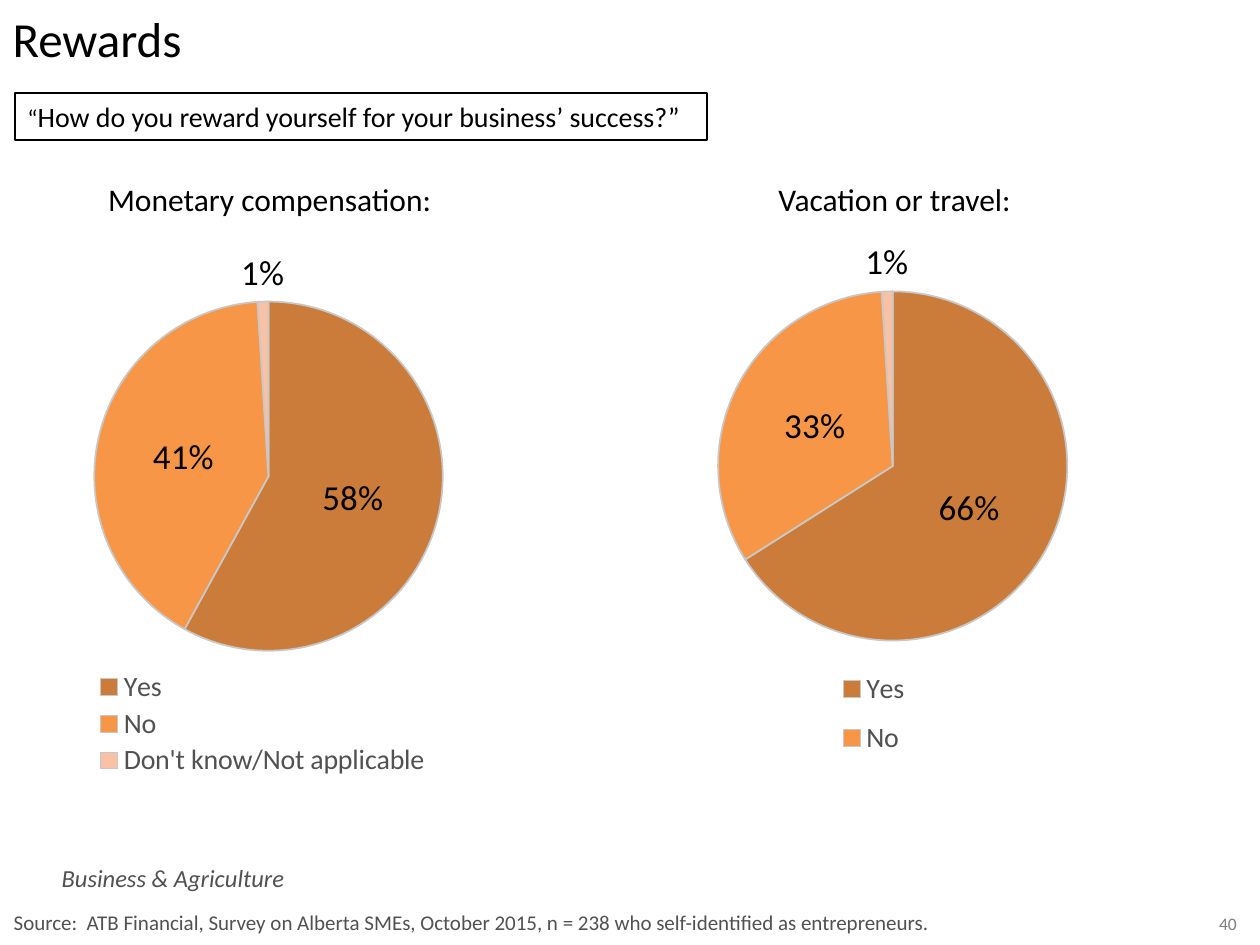
from lxml import etree
from pptx import Presentation
from pptx.chart.data import CategoryChartData
from pptx.dml.color import RGBColor
from pptx.enum.chart import XL_CHART_TYPE, XL_LABEL_POSITION, XL_LEGEND_POSITION
from pptx.enum.shapes import MSO_SHAPE
from pptx.enum.text import MSO_ANCHOR, PP_ALIGN
from pptx.oxml.ns import qn
from pptx.util import Pt

PIE = XL_CHART_TYPE.PIE
CENTER, OUTSIDE = XL_LABEL_POSITION.CENTER, XL_LABEL_POSITION.OUTSIDE_END
LEGEND_BOTTOM = XL_LEGEND_POSITION.BOTTOM
LEFT, MIDDLE_ALIGN = PP_ALIGN.LEFT, PP_ALIGN.CENTER

# Content
COLORS = {"black": "000000", "gray": "505150", "light_gray": "808080", "edge": "C8C8C8"}
SLICE_COLORS = {"yes": "CB7C3A", "no": "F79646", "other": "F9C1A5"}
TITLE = "Rewards"
QUESTION = [("“", 14), ("How do you reward yourself for your business’ success?”", 16)]
FOOTERS = [  # text, (left, top, width, height), format, alignment
    ("40", (684, 518.4, 35.3, 19.4), {"size": Pt(10), "color": "light_gray"}, MIDDLE_ALIGN),
    ("Business & Agriculture", (28.1, 489.6, 202.3, 24.5),
     {"size": Pt(14), "italic": True, "color": "gray"}, LEFT),
    ("Source:  ATB Financial, Survey on Alberta SMEs, October 2015, n = 238 "
     "who self-identified as entrepreneurs.",
     (0.7, 516.2, 670.3, 21.6), {"size": Pt(12), "color": "gray"}, LEFT),
]
PIES = [
    {"heading": "Monetary compensation:", "heading_left": 46.8, "left": 38.9, "top": 139,
     "categories": ["Yes", "No", "Don't know/Not applicable"], "values": [0.58, 0.41, 0.01],
     "plot": (0.07, 0.01, 0.93, 0.77), "legend": (0.07, 0.72, 0.9, 0.19), "hidden": []},
    {"heading": "Vacation or travel:", "heading_left": 403.9, "left": 403.9, "top": 133.2,
     "categories": ["Yes", "No", "Not applicable"], "values": [0.66, 0.33, 0.01],
     "plot": (0.03, 0.01, 0.93, 0.77), "legend": (0.32, 0.72, 0.25, 0.19), "hidden": [2]},
]
HEADING_TOP, HEADING_HEIGHT = 99.4, 42.5
PIE_WIDTH, PIE_HEIGHT = 214.6, 337


def set_font(font, color="black", **values):
    for name, value in {"name": "Calibri", **values}.items():
        setattr(font, name, value)
    font.color.rgb = RGBColor.from_string(COLORS[color])


def add_text(page, text, place, values, align=LEFT):
    box = page.shapes.add_textbox(*map(Pt, place))
    box.text_frame.word_wrap = True
    para = box.text_frame.paragraphs[0]
    para.alignment = align
    span = para.add_run()
    span.text = text
    set_font(span.font, **values)


def add_child(parent, tag, value=None):
    child = etree.SubElement(parent, qn(tag))
    if value is not None:
        child.set("val", str(value))
    return child


def make_layout(parent, place, inner=False):
    """Build a manual layout from fractions of the chart area."""
    layout = add_child(parent, "c:layout")
    manual = add_child(layout, "c:manualLayout")
    if inner:
        add_child(manual, "c:layoutTarget", "inner")
    for tag in ("c:xMode", "c:yMode"):
        add_child(manual, tag, "edge")
    for tag, value in zip(("c:x", "c:y", "c:w", "c:h"), place):
        add_child(manual, tag, value)
    return layout


def add_pie(page, pie):
    data = CategoryChartData(number_format="0%")
    data.categories = pie["categories"]
    data.add_series("Series 1", pie["values"])
    place = (pie["left"], pie["top"], PIE_WIDTH, PIE_HEIGHT)
    chart = page.shapes.add_chart(PIE, *map(Pt, place), data).chart
    chart.has_title = False
    set_font(chart.font, size=Pt(18))

    # Slices
    series = chart.plots[0].series[0]
    for index, color in enumerate(SLICE_COLORS.values()):
        form = series.points[index].format
        form.fill.solid()
        form.fill.fore_color.rgb = RGBColor.from_string(color)
        form.line.color.rgb = RGBColor.from_string(COLORS["edge"])
        form.line.width = Pt(1)

    # Percentages, with the thin slice labelled outside
    labels = series.data_labels
    labels.show_percentage, labels.show_value = True, False
    labels.number_format, labels.number_format_is_linked = "0%", False
    labels.position = CENTER
    set_font(labels.font, size=Pt(20))
    thin = series.points[2].data_label
    thin.position = OUTSIDE
    set_font(thin.font, size=Pt(20))

    # Legend
    chart.has_legend = True
    legend = chart.legend
    legend.position = LEGEND_BOTTOM
    legend.include_in_layout = False
    set_font(legend.font, "gray", size=Pt(16))
    root = chart.element
    anchor = root.find(".//" + qn("c:legendPos"))
    anchor.addnext(make_layout(anchor.getparent(), pie["legend"]))
    for index in pie["hidden"]:
        entry = add_child(anchor.getparent(), "c:legendEntry")
        add_child(entry, "c:idx", index)
        add_child(entry, "c:delete", 1)
        anchor.addnext(entry)

    # Plot position
    area = root.find(".//" + qn("c:plotArea"))
    for old in area.findall(qn("c:layout")):
        area.remove(old)
    area.insert(0, make_layout(area, pie["plot"], inner=True))


def main():
    deck = Presentation()
    deck.slide_width, deck.slide_height = Pt(720), Pt(540)
    page = deck.slides.add_slide(deck.slide_layouts[5])

    # Title
    title = page.shapes.title
    title.left, title.top, title.width, title.height = map(Pt, (0, 0, 720, 56.9))
    title.text = TITLE
    frame = title.text_frame
    frame.vertical_anchor = MSO_ANCHOR.TOP
    frame.margin_top = Pt(5)
    frame.paragraphs[0].alignment = LEFT
    set_font(frame.paragraphs[0].runs[0].font, size=Pt(28))

    # Question
    box = page.shapes.add_shape(MSO_SHAPE.RECTANGLE, *map(Pt, (8.6, 53.3, 395.3, 26.6)))
    box.shadow.inherit = False
    box.fill.background()
    box.line.color.rgb = RGBColor.from_string(COLORS["black"])
    box.line.width = Pt(1)
    para = box.text_frame.paragraphs[0]
    para.alignment = LEFT
    for text, size in QUESTION:
        span = para.add_run()
        span.text = text
        set_font(span.font, size=Pt(size))

    # Pies with headings
    for pie in PIES:
        place = (pie["heading_left"], HEADING_TOP, PIE_WIDTH, HEADING_HEIGHT)
        add_text(page, pie["heading"], place, {"size": Pt(18)}, MIDDLE_ALIGN)
        add_pie(page, pie)

    # Footers
    for footer in FOOTERS:
        add_text(page, *footer)

    deck.save("out.pptx")


if __name__ == "__main__":
    main()
